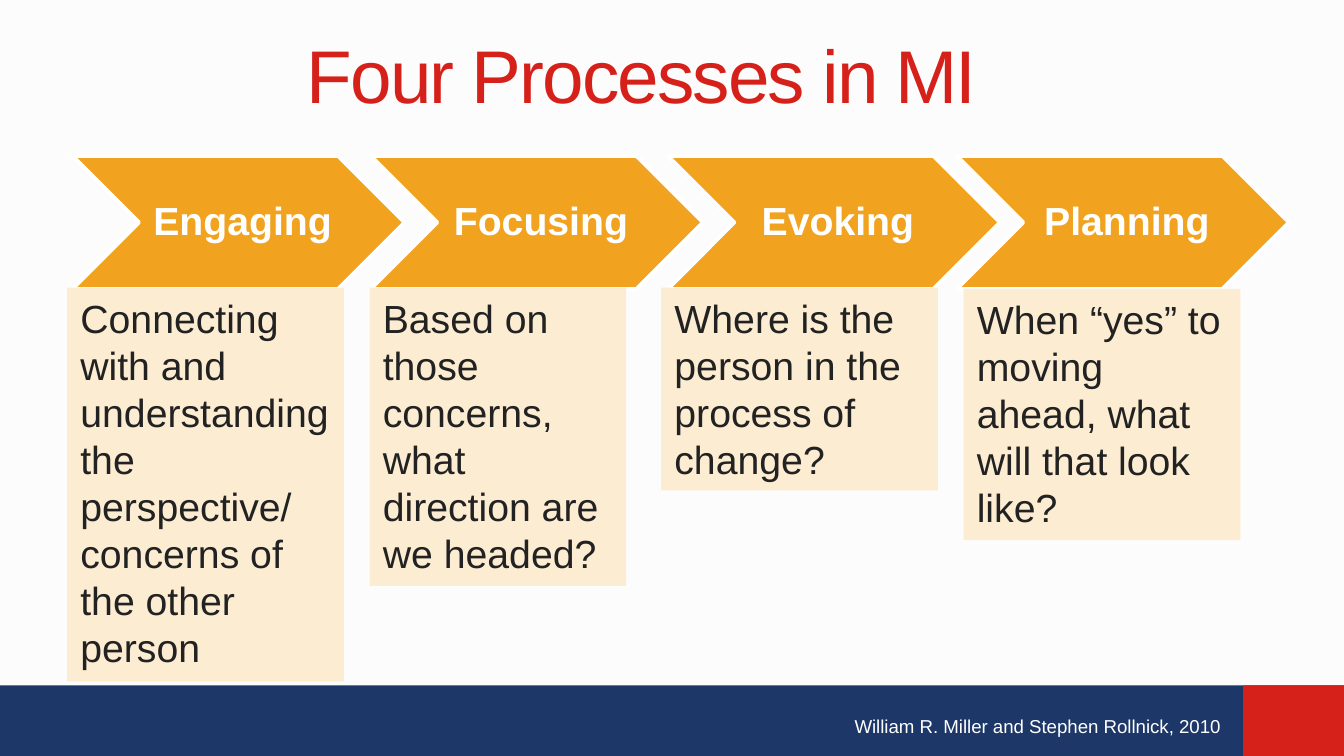
"""Build the slide on the four processes in MI."""
from pptx import Presentation
from pptx.dml.color import RGBColor
from pptx.enum.shapes import MSO_SHAPE
from pptx.enum.text import MSO_ANCHOR, MSO_AUTO_SIZE, PP_ALIGN
from pptx.util import Inches, Pt

RECT, CHEVRON = MSO_SHAPE.RECTANGLE, MSO_SHAPE.CHEVRON
TOP, MIDDLE = MSO_ANCHOR.TOP, MSO_ANCHOR.MIDDLE
LEFT, CENTER = PP_ALIGN.LEFT, PP_ALIGN.CENTER
GROW = MSO_AUTO_SIZE.SHAPE_TO_FIT_TEXT

PAPER = RGBColor(0xFC, 0xFC, 0xFC)
NAVY = RGBColor(0x1C, 0x37, 0x68)
RED = RGBColor(0xD6, 0x20, 0x1A)
ORANGE = RGBColor(0xF1, 0xA2, 0x1F)
CREAM = RGBColor(0xFC, 0xEC, 0xD2)
INK = RGBColor(0x22, 0x22, 0x22)
WHITE = RGBColor(0xFF, 0xFF, 0xFF)

FONT = "Arial"
TITLE = "Four Processes in MI"
CREDIT = "William R. Miller and Stephen Rollnick, 2010"
PROCESSES = [
    ("Engaging", 0.54, (0.5, 2.14, 2.06, 2.93),
     "Connecting with and understanding the perspective/ concerns of the other person"),
    ("Focusing", 2.76, (2.75, 2.14, 1.91, 2.22),
     "Based on those concerns, what direction are we headed?"),
    ("Evoking", 4.97, (4.92, 2.14, 2.06, 1.51),
     "Where is the person in the process of change?"),
    ("Planning", 7.12, (7.17, 2.15, 2.06, 1.87),
     "When “yes” to moving ahead, what will that look like?"),
]
SLIDE_W = 10
SLIDE_H = SLIDE_W * 9 / 16
BAND_TOP = 5.1
BANDS = [(0, NAVY), (9.25, RED)]
ROW_TOP, ROW_H = 1.16, 0.99
CHEVRON_W, LABEL_W = 2.47, 1.48
LABEL_INSETS = (0.09, 0.03, 0.03, 0.03)
INSETS = (0.1, 0.05, 0.1, 0.05)


def add_block(slide, kind, box, fill):
    sp = slide.shapes.add_shape(kind, *map(Inches, box))
    sp.shadow.inherit = False
    sp.fill.solid()
    sp.fill.fore_color.rgb = fill
    sp.line.fill.background()
    return sp


def add_label(slide, box):
    return slide.shapes.add_textbox(*map(Inches, box))


def write(sp, text, size, color, align=LEFT, anchor=TOP, insets=INSETS, bold=False):
    tf = sp.text_frame
    tf.word_wrap = True
    tf.vertical_anchor = anchor
    tf.margin_left, tf.margin_top, tf.margin_right, tf.margin_bottom = map(Inches, insets)
    p = tf.paragraphs[0]
    p.alignment = align
    r = p.add_run()
    r.text = text
    r.font.name, r.font.size, r.font.bold = FONT, Pt(size), bold
    r.font.color.rgb = color
    return p


def main():
    prs = Presentation()
    prs.slide_width, prs.slide_height = Inches(SLIDE_W), Inches(SLIDE_H)
    s = prs.slides.add_slide(prs.slide_layouts[6])
    s.background.fill.solid()
    s.background.fill.fore_color.rgb = PAPER

    for x, fill in BANDS:
        add_block(s, RECT, (x, BAND_TOP, SLIDE_W - x, SLIDE_H - BAND_TOP), fill)

    p = write(add_label(s, (-0.14, 0.08, 9.83, 0.94)), TITLE, 40, RED, CENTER, MIDDLE)
    p.runs[0].font._element.set("spc", "-100")

    for name, x, _, _ in PROCESSES:
        sp = add_block(s, CHEVRON, (x, ROW_TOP, CHEVRON_W, ROW_H), ORANGE)
        sp.line.color.rgb = WHITE
        sp.line.width = Pt(2)
        label_x = x + (CHEVRON_W - LABEL_W) / 2
        sp = add_label(s, (label_x, ROW_TOP, LABEL_W, ROW_H))
        p = write(sp, name, 21, WHITE, CENTER, MIDDLE, LABEL_INSETS, True)
        p.line_spacing = 0.9

    for _, _, box, text in PROCESSES:
        sp = add_block(s, RECT, box, CREAM)
        write(sp, text, 21, INK)
        sp.text_frame.auto_size = GROW

    sp = add_label(s, (6.26, 5.27, 2.95, 0.27))
    write(sp, CREDIT, 10, WHITE)
    sp.text_frame.auto_size = GROW

    prs.save("out.pptx")


if __name__ == "__main__":
    main()
